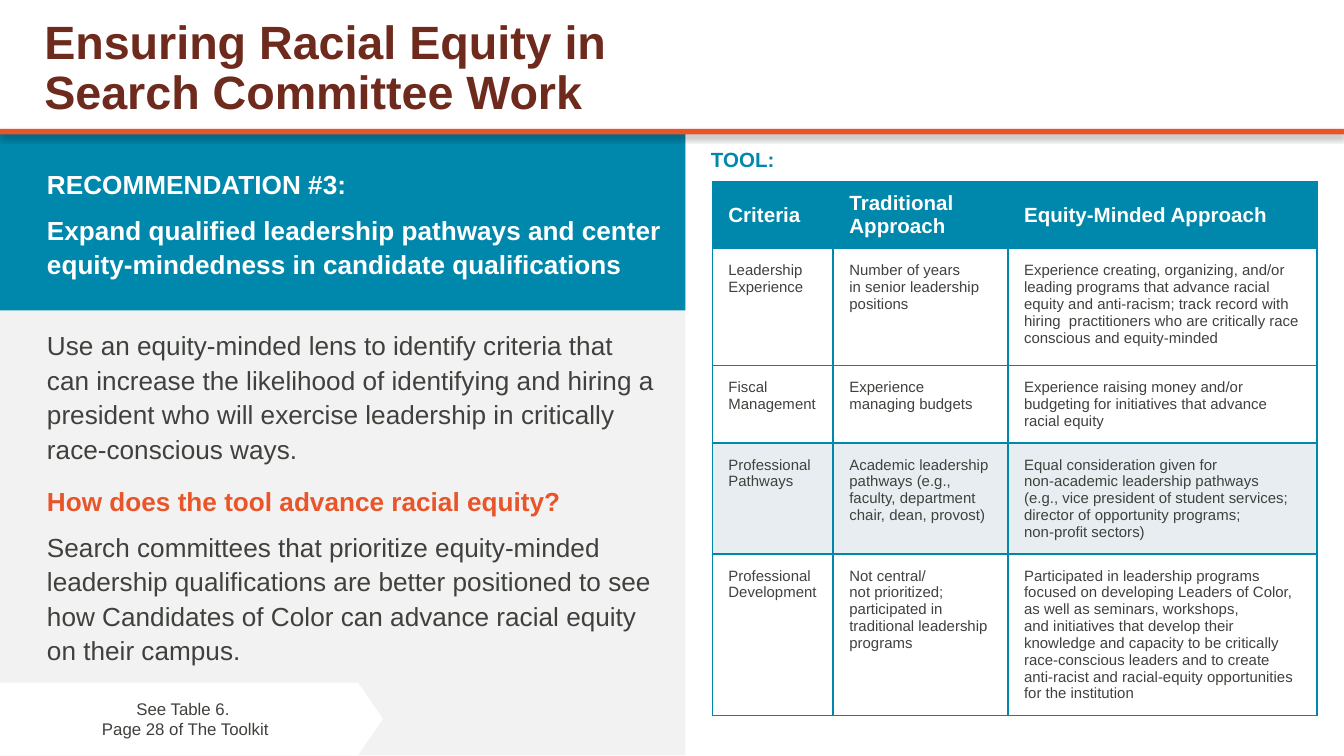
from dataclasses import dataclass

from lxml import etree
from pptx import Presentation
from pptx import util as u
from pptx.dml.color import RGBColor
from pptx.enum import shapes, text
from pptx.oxml import ns


@dataclass(frozen=True)
class Theme:
    font: str = "Arial"
    teal: str = "0088AC"
    orange: str = "E95429"
    maroon: str = "6E2A1D"
    ink: str = "3E413C"
    white: str = "FFFFFF"
    panel: str = "F2F2F2"
    highlight: str = "E7EDF1"
    title: int = 25
    body: int = 14
    heading: int = 11
    note: int = 9
    cell: int = 8


theme = Theme()
presentation = Presentation()
# Widescreen, 16:9
presentation.slide_width = u.Inches(10)
presentation.slide_height = u.Inches(10 * 9 / 16)
slide = presentation.slides.add_slide(presentation.slide_layouts[5])


def add_block(kind, box, color):
    shape = slide.shapes.add_shape(kind, *[u.Inches(value) for value in box])
    shape.shadow.inherit = False
    shape.fill.solid()
    shape.fill.fore_color.rgb = RGBColor.from_string(color)
    shape.line.fill.background()
    return shape


def write(frame, lines, size, margins, spacing=1.0, after=0,
          anchor=text.MSO_ANCHOR.TOP, align=text.PP_ALIGN.LEFT):
    """Fill a frame with (wording, color, bold) paragraphs."""
    frame.word_wrap = True
    frame.auto_size = text.MSO_AUTO_SIZE.NONE
    frame.vertical_anchor = anchor
    (frame.margin_left, frame.margin_top,
     frame.margin_right, frame.margin_bottom) = [u.Inches(m) for m in margins]
    for index, (wording, color, bold) in enumerate(lines):
        paragraph = frame.paragraphs[0] if index == 0 else frame.add_paragraph()
        paragraph.text = wording
        paragraph.alignment = align
        paragraph.line_spacing = spacing
        paragraph.space_before = u.Pt(0)
        paragraph.space_after = u.Pt(after if index < len(lines) - 1 else 0)
        for run in paragraph.runs:
            run.font.name = theme.font
            run.font.size = u.Pt(size)
            run.font.bold = bold
            run.font.color.rgb = RGBColor.from_string(color)


# Title
title = slide.shapes.title
title.left, title.top = u.Inches(0.23), u.Inches(0.31)
title.width, title.height = u.Inches(7.41), u.Inches(0.41)
write(title.text_frame,
      [("Ensuring Racial Equity in \vSearch Committee Work", theme.maroon, True)],
      theme.title, (0.1, 0.05, 0.1, 0.05), spacing=0.9,
      anchor=text.MSO_ANCHOR.MIDDLE)

# Left panel and recommendation banner
rectangle = shapes.MSO_SHAPE.RECTANGLE
add_block(rectangle, (0, 0.97, 5.1, 4.65), theme.panel)
banner = add_block(rectangle, (0, 0.98, 5.1, 1.33), theme.teal)
write(banner.text_frame, [
    ("RECOMMENDATION #3:", theme.white, True),
    ("Expand qualified leadership pathways and center "
     "equity-mindedness in candidate qualifications", theme.white, True),
], theme.body, (0.35, 0.25, 0.1, 0.05), spacing=1.1, after=6)

# Text boxes: explanation, question and answer, table label
text_boxes = [
    ((0.35, 2.38, 4.77, 1.14), theme.body, [
        ("Use an equity-minded lens to identify criteria that \v"
         "can increase the likelihood of identifying and hiring a president "
         "who will exercise leadership in critically race-conscious ways.",
         theme.ink, False)]),
    ((0.35, 3.54, 4.77, 1.19), theme.body, [
        ("How does the tool advance racial equity?", theme.orange, True),
        ("Search committees that prioritize equity-minded leadership "
         "qualifications are better positioned to see how Candidates of Color "
         "can advance racial equity \von their campus.", theme.ink, False)]),
    ((5.29, 1.03, 0.96, 0.35), theme.heading, [("TOOL:", theme.teal, True)]),
]
for box, size, lines in text_boxes:
    text_box = slide.shapes.add_textbox(*[u.Inches(value) for value in box])
    write(text_box.text_frame, lines, size, (0, 0.05, 0.1, 0.05),
          spacing=1.1, after=6)

# Page reference tag
tag = add_block(shapes.MSO_SHAPE.PENTAGON, (0, 5.08, 2.85, 0.54), theme.white)
tag.adjustments[0] = 0.345
write(tag.text_frame,
      [("See Table 6. \vPage 28 of The Toolkit", theme.ink, False)],
      theme.note, (0.1, 0.05, 0.1, 0.05),
      anchor=text.MSO_ANCHOR.MIDDLE, align=text.PP_ALIGN.CENTER)

# Criteria table
rows = [
    ("Criteria", "Traditional Approach", "Equity-Minded Approach"),
    ("Leadership Experience",
     "Number of years \vin senior leadership positions",
     "Experience creating, organizing, and/or leading programs that advance "
     "racial equity and anti-racism; track record with hiring  practitioners "
     "who are critically race conscious and equity-minded"),
    ("Fiscal Management",
     "Experience managing budgets",
     "Experience raising money and/or budgeting for initiatives that advance "
     "racial equity"),
    ("Professional Pathways",
     "Academic leadership pathways (e.g., faculty, department chair, dean, "
     "provost)",
     "Equal consideration given for \vnon-academic leadership pathways \v"
     "(e.g., vice president of student services; director of opportunity "
     "programs; \vnon-profit sectors)"),
    ("Professional Development",
     "Not central/\vnot prioritized; participated in traditional leadership "
     "programs",
     "Participated in leadership programs focused on developing Leaders of "
     "Color, \vas well as seminars, workshops, \vand initiatives that develop "
     "their knowledge and capacity to be critically race-conscious leaders "
     "and to create \vanti-racist and racial-equity opportunities for the "
     "institution"),
]
column_widths = [0.9, 1.3, 2.3]
row_heights = [0.5, 0.87, 0.5, 0.73, 1.15]
row_fills = [theme.teal, theme.white, theme.white, theme.highlight, theme.white]

table = slide.shapes.add_table(
    len(rows), len(column_widths), u.Inches(5.3), u.Inches(1.35),
    u.Inches(sum(column_widths)), u.Inches(sum(row_heights))).table
table.horz_banding = False
for column, width in zip(table.columns, column_widths):
    column.width = u.Inches(width)
for row_index, wordings in enumerate(rows):
    table.rows[row_index].height = u.Inches(row_heights[row_index])
    header = row_index == 0
    for column_index, wording in enumerate(wordings):
        cell = table.cell(row_index, column_index)
        last = column_index == len(wordings) - 1
        pad = 0.02 if header else 0.1
        right = 0.1 if last else 0.02 if header else 0.12
        margins = (0.12, pad, right, pad)
        (cell.margin_left, cell.margin_top,
         cell.margin_right, cell.margin_bottom) = [u.Inches(m) for m in margins]
        cell.vertical_anchor = (text.MSO_ANCHOR.MIDDLE if header
                                else text.MSO_ANCHOR.TOP)
        cell.text_frame.text = wording
        for run in cell.text_frame.paragraphs[0].runs:
            run.font.name = theme.font
            run.font.size = u.Pt(theme.heading if header else theme.cell)
            run.font.bold = header
            run.font.color.rgb = RGBColor.from_string(
                theme.white if header else theme.ink)
        # Borders come before the fill in the cell properties
        properties = cell._tc.get_or_add_tcPr()
        for side in ("a:lnL", "a:lnR", "a:lnT", "a:lnB"):
            border = etree.SubElement(properties, ns.qn(side), w=str(u.Pt(1)))
            solid = etree.SubElement(border, ns.qn("a:solidFill"))
            etree.SubElement(solid, ns.qn("a:srgbClr"), val=theme.teal)
        cell.fill.solid()
        cell.fill.fore_color.rgb = RGBColor.from_string(row_fills[row_index])

# Divider with a soft shadow below the title
divider = add_block(rectangle, (0, 0.96, 10, 0.04), theme.orange)
effects = divider._element.spPr.find(ns.qn("a:effectLst"))
shadow = etree.SubElement(
    effects, ns.qn("a:outerShdw"), blurRad=str(u.Pt(3.1)), dist=str(u.Pt(1.8)),
    dir=str(90 * 60000), algn="t", rotWithShape="0")
shadow_color = etree.SubElement(shadow, ns.qn("a:srgbClr"), val="000000")
etree.SubElement(shadow_color, ns.qn("a:alpha"), val="35000")

presentation.save("out.pptx")
